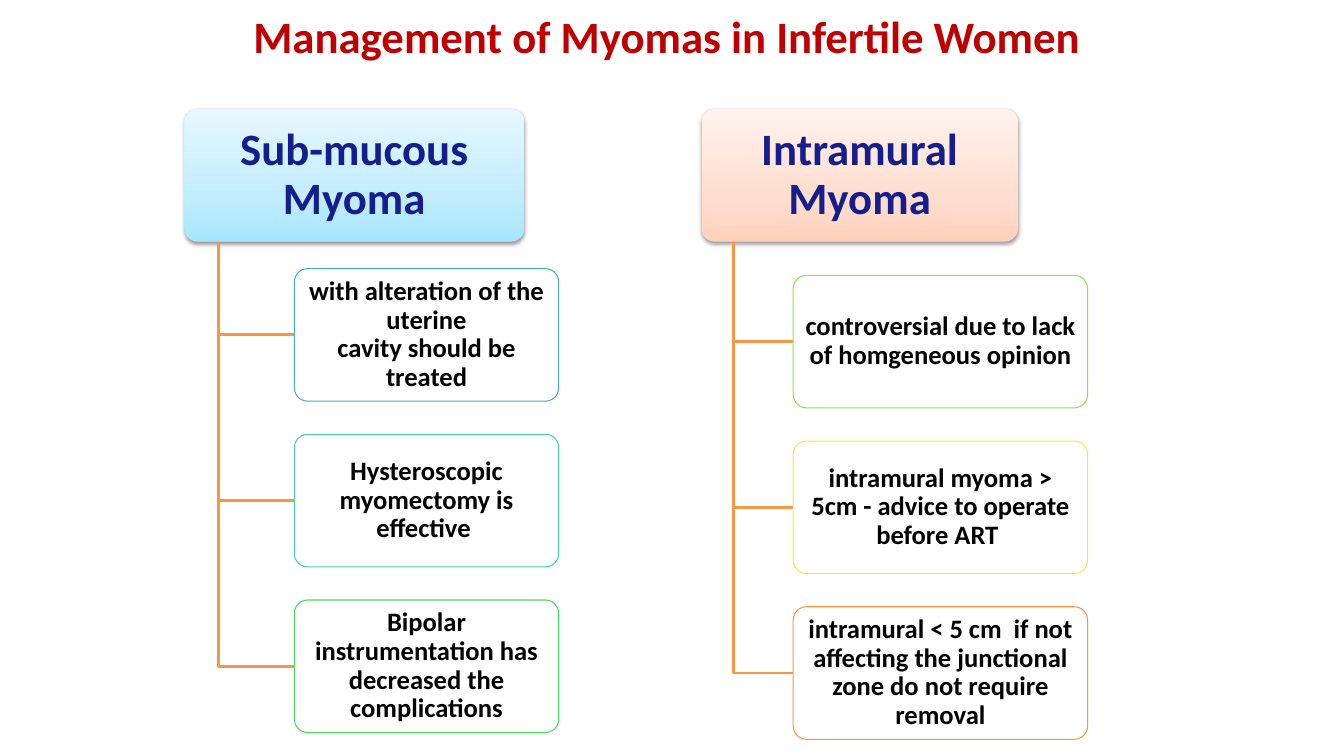
"""Build the slide on managing myomas in infertile women."""
from copy import deepcopy
from dataclasses import dataclass

from lxml import etree
from pptx import Presentation
from pptx.dml.color import RGBColor
from pptx.enum import shapes, text
from pptx.oxml.ns import qn
from pptx.util import Cm, Pt


@dataclass(frozen=True)
class Theme:
    """Colours and type sizes of the slide."""
    font: str = "Calibri"
    title: str = "C00000"
    heading: str = "151E8D"
    body: str = "000000"
    box: str = "FFFFFF"
    branch: str = "F79646"
    blue: tuple = ("A7E6FF", "C1EDFF", "E7F8FF")
    peach: tuple = ("FFD2BD", "FFDED0", "FFF2ED")
    big: int = 32
    small: int = 19


T = Theme()
HEAD_TOP, BOX_H = 2.75, 3.34
PITCH = 1.25 * BOX_H

COLUMNS = [
    dict(heading="Sub-mucous Myoma", stops=T.blue, left=4.65, width=8.56,
         item_left=7.42, item_width=6.66, item_top=6.77, items=[
             ("with alteration of the uterine\vcavity should be treated", "4BACC6"),
             ("Hysteroscopic myomectomy is effective ", "49D1A3"),
             ("Bipolar instrumentation has decreased the complications", "47DC57")]),
    dict(heading="Intramural Myoma", stops=T.peach, left=17.68, width=7.97,
         item_left=19.99, item_width=7.42, item_top=6.94, items=[
             ("controversial due to lack of homgeneous opinion", "8DE646"),
             ("intramural myoma > 5cm - advice to operate before ART ", "EEEF46"),
             ("intramural < 5 cm  if not affecting the junctional zone "
              "do not require removal", "F79646")]),
]


def write(sp, words, size, color):
    """Set bold centred text in a shape."""
    tf = sp.text_frame
    tf.text = words
    tf.word_wrap = True
    tf.auto_size = text.MSO_AUTO_SIZE.NONE
    p = tf.paragraphs[0]
    p.alignment = text.PP_ALIGN.CENTER
    for r in p.runs:
        r.font.name, r.font.size, r.font.bold = T.font, Pt(size), True
        r.font.color.rgb = RGBColor.from_string(color)


def add_title(s, words):
    """Place and format the title placeholder."""
    sp = s.shapes.title
    sp.left, sp.top, sp.width, sp.height = Cm(5.51), Cm(0.08), Cm(22.86), Cm(3.18)
    write(sp, words, T.big, T.title)
    sp.text_frame.vertical_anchor = text.MSO_ANCHOR.TOP


def add_box(s, left, top, width, words, size, color, inset_x, inset_y):
    """Add a rounded box with text and no shadow."""
    sp = s.shapes.add_shape(shapes.MSO_SHAPE.ROUNDED_RECTANGLE,
                            Cm(left), Cm(top), Cm(width), Cm(BOX_H))
    sp.adjustments[0] = 0.1
    sp.shadow.inherit = False
    write(sp, words, size, color)
    tf = sp.text_frame
    tf.vertical_anchor = text.MSO_ANCHOR.MIDDLE
    tf.margin_left = tf.margin_right = Cm(inset_x)
    tf.margin_top = tf.margin_bottom = Cm(inset_y)
    tf.paragraphs[0].line_spacing = 0.9
    return sp


def add_heading(s, left, width, words, stops):
    """Add a gradient heading box with a soft shadow."""
    sp = add_box(s, left, HEAD_TOP, width, words, T.big, T.heading, 0.28, 0.2)
    sp.line.fill.background()
    sp.fill.gradient()
    sp.fill.gradient_angle = 90
    spPr = sp._element.spPr
    gs_list = spPr.find(".//" + qn("a:gsLst"))
    gs_list.append(deepcopy(gs_list[-1]))
    for stop, position, color in zip(sp.fill.gradient_stops, (0, 0.35, 1), stops):
        stop.position = position
        stop.color.rgb = RGBColor.from_string(color)
    shadow = etree.SubElement(spPr.find(qn("a:effectLst")), qn("a:outerShdw"),
                              blurRad=str(Pt(3.1)), dist=str(Pt(1.6)),
                              dir="5400000", rotWithShape="0")
    black = etree.SubElement(shadow, qn("a:srgbClr"), val="000000")
    etree.SubElement(black, qn("a:alpha"), val="38000")


def add_item(s, left, top, width, words, outline):
    """Add an outlined box for one recommendation."""
    sp = add_box(s, left, top, width, words, T.small, T.body, 0.2, 0.18)
    sp.fill.solid()
    sp.fill.fore_color.rgb = RGBColor.from_string(T.box)
    white = sp._element.spPr.find(qn("a:solidFill"))[0]
    etree.SubElement(white, qn("a:alpha"), val="90000")
    sp.line.color.rgb = RGBColor.from_string(outline)
    sp.line.width = Pt(0.75)


def add_branch(s, x, top, right, bottom):
    """Add an elbow line from a heading down and across to an item."""
    builder = s.shapes.build_freeform(Cm(x), Cm(top))
    builder.add_line_segments([(Cm(x), Cm(bottom)), (Cm(right), Cm(bottom))], close=False)
    sp = builder.convert_to_shape()
    sp.shadow.inherit = False
    sp.fill.background()
    sp.line.color.rgb = RGBColor.from_string(T.branch)
    sp.line.width = Pt(2)


def add_column(s, heading, stops, left, width, item_left, item_width, item_top, items):
    """Add a heading with its branches and items."""
    add_heading(s, left, width, heading, stops)
    for i, (words, outline) in enumerate(items):
        top = item_top + i * PITCH
        add_branch(s, left + 0.1 * width, HEAD_TOP + BOX_H, item_left, top + BOX_H / 2)
        add_item(s, item_left, top, item_width, words, outline)


def main():
    """Build and save the slide."""
    prs = Presentation()
    prs.slide_width, prs.slide_height = Cm(33.87), Cm(19.05)
    s = prs.slides.add_slide(prs.slide_layouts[5])
    add_title(s, "Management of Myomas in Infertile Women ")
    for column in COLUMNS:
        add_column(s, **column)
    prs.save("out.pptx")


if __name__ == "__main__":
    main()
